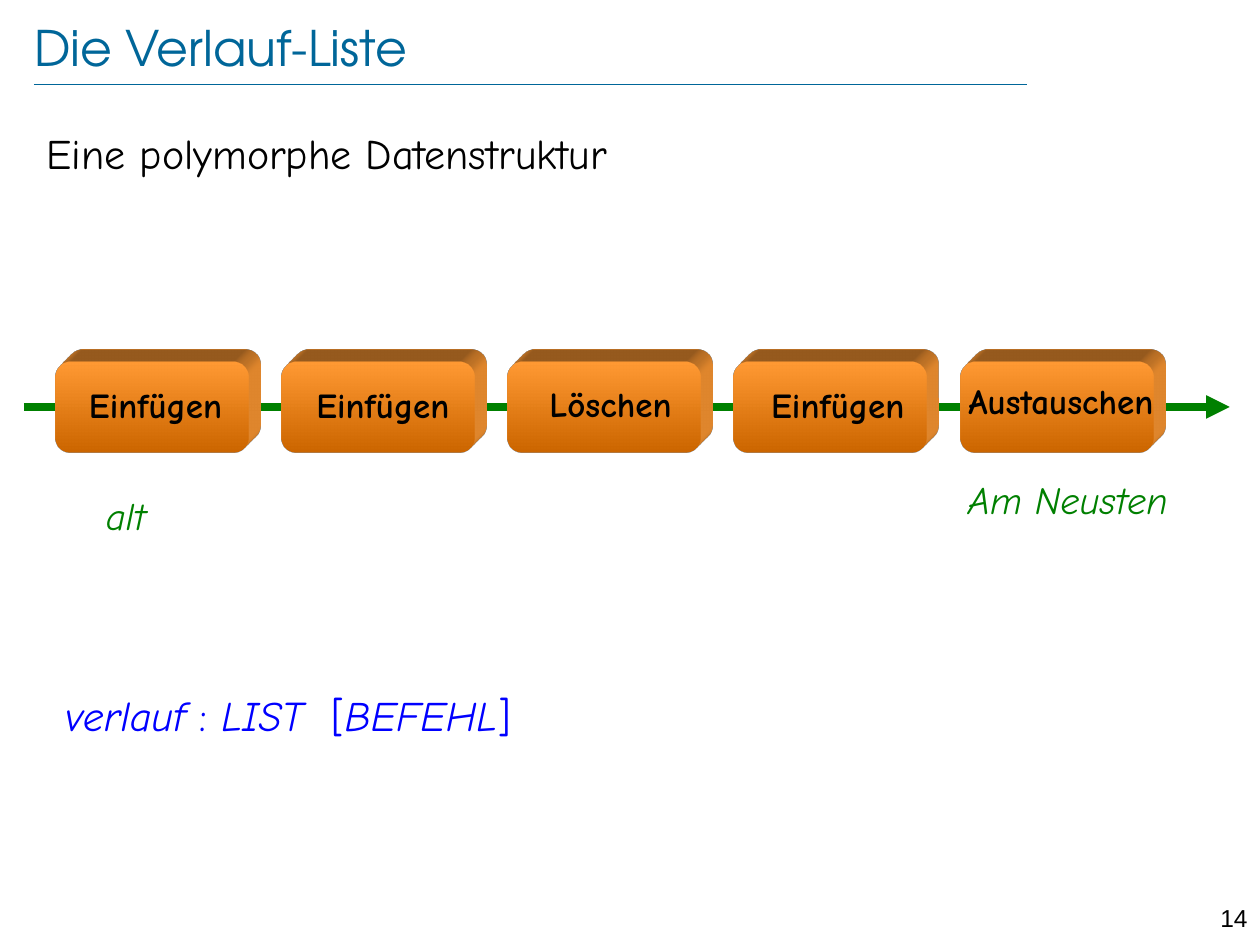
from lxml import etree
from pptx import Presentation
from pptx.dml.color import RGBColor
from pptx.enum.shapes import MSO_CONNECTOR, MSO_SHAPE
from pptx.enum.text import MSO_ANCHOR, PP_ALIGN
from pptx.oxml import parse_xml
from pptx.oxml.ns import nsdecls, qn
from pptx.util import Inches, Pt

LEFT, CENTER, RIGHT = PP_ALIGN.LEFT, PP_ALIGN.CENTER, PP_ALIGN.RIGHT
TOP, MIDDLE = MSO_ANCHOR.TOP, MSO_ANCHOR.MIDDLE
ROUND_RECT = MSO_SHAPE.ROUNDED_RECTANGLE
STRAIGHT = MSO_CONNECTOR.STRAIGHT

HAND = "Comic Neue"
BLACK, TEAL, BLUE, GREEN = "000000", "006699", "0000FF", "008000"
ORANGE, DARK_ORANGE = "FF9933", "CC6600"

BOX_LEFT, BOX_TOP, BOX_W, BOX_H, BOX_STEP = 0.44, 2.87, 1.53, 0.72, 1.795
COMMAND_LABELS = [
    ("Einfügen", (0.44, 2.97, 1.59, 0.48), True),
    ("Einfügen", (2.26, 2.97, 1.56, 0.48), True),
    ("Löschen", (4.15, 2.99, 1.39, 0.44), False),
    ("Einfügen", (5.86, 2.97, 1.58, 0.48), True),
    ("Austauschen", (7.47, 2.96, 1.9, 0.44), False),
]


def rgb(value):
    return RGBColor.from_string(value)


def inches(values):
    return [Inches(v) for v in values]


def write(s, runs, size, color, font=HAND, bold=False, align=LEFT, anchor=TOP):
    """Fill a shape with one paragraph of (text, italic) runs."""
    tf = s.text_frame
    tf.word_wrap = True
    tf.vertical_anchor = anchor
    p = tf.paragraphs[0]
    p.alignment = align
    p.space_before = Pt(0)
    for text, italic in runs:
        r = p.add_run()
        r.text = text
        r.font.name = font
        r.font.size = Pt(size)
        r.font.bold = bold
        r.font.italic = italic
        r.font.color.rgb = rgb(color)
    return p


def place(s, box):
    s.left, s.top, s.width, s.height = inches(box)


def add_title(slide, text):
    title = slide.shapes.title
    place(title, (0.27, 0.13, 8.69, 0.48))
    tf = title.text_frame
    tf.margin_left = tf.margin_top = tf.margin_right = tf.margin_bottom = 0
    write(title, [(text, False)], 28, TEAL, "TeX Gyre Adventor", anchor=MIDDLE)


def add_body(slide, text):
    body = slide.placeholders[1]
    place(body, (0.27, 0.96, 9.4, 6.17))
    p = write(body, [(text, False)], 24, BLACK)
    pPr = p._p.get_or_add_pPr()
    pPr.set("marL", "0")
    pPr.set("indent", "0")
    etree.SubElement(pPr, qn("a:buNone"))


def add_text(slide, box, runs, size, color, **style):
    write(slide.shapes.add_textbox(*inches(box)), runs, size, color, **style)


def add_line(slide, x1, x2, y, color, width, arrow=False):
    line = slide.shapes.add_connector(STRAIGHT, *inches((x1, y, x2, y)))
    line.line.color.rgb = rgb(color)
    line.line.width = Pt(width)
    if arrow:
        ln = line.line._get_or_add_ln()
        etree.SubElement(ln, qn("a:tailEnd"), type="triangle")
    etree.SubElement(line._element.spPr, qn("a:effectLst"))


def extrude(s, color):
    """Give a shape depth towards the top right."""
    spPr = s._element.spPr
    spPr.append(parse_xml(
        f'<a:scene3d {nsdecls("a")}><a:camera prst="legacyObliqueTopRight"/>'
        '<a:lightRig rig="legacyFlat3" dir="b"/></a:scene3d>'))
    spPr.append(parse_xml(
        f'<a:sp3d {nsdecls("a")} extrusionH="252000" prstMaterial="legacyMatte">'
        '<a:bevelT w="13500" h="13500" prst="angle"/>'
        '<a:bevelB w="13500" h="13500" prst="angle"/>'
        f'<a:extrusionClr><a:srgbClr val="{color}"/></a:extrusionClr></a:sp3d>'))


def add_command_box(slide, left):
    s = slide.shapes.add_shape(ROUND_RECT, *inches((left, BOX_TOP, BOX_W, BOX_H)))
    s.shadow.inherit = False
    s.fill.gradient()
    s.fill.gradient_angle = 270
    for stop, color in zip(s.fill.gradient_stops, (ORANGE, DARK_ORANGE)):
        stop.color.rgb = rgb(color)
    s.line.fill.background()
    extrude(s, ORANGE)


def add_command_label(slide, text, box, rounded):
    if rounded:
        s = slide.shapes.add_shape(ROUND_RECT, *inches(box))
        s.shadow.inherit = False
        s.fill.background()
        s.line.fill.background()
    else:
        s = slide.shapes.add_textbox(*inches(box))
    write(s, [(text, False)], 20, BLACK, bold=True, align=CENTER)


def main():
    prs = Presentation()
    prs.slide_width, prs.slide_height = Inches(10), Inches(7.5)
    slide = prs.slides.add_slide(prs.slide_layouts[1])

    add_line(slide, 0.27, 8.15, 0.67, TEAL, 0.25)
    add_text(slide, (9.45, 7.16, 0.55, 0.24), [("14", False)], 14, BLACK,
             font="Arial", align=RIGHT, anchor=MIDDLE)
    add_title(slide, "Die Verlauf-Liste")
    add_body(slide, "Eine polymorphe Datenstruktur")
    add_text(slide, (0.42, 5.42, 9.17, 0.5),
             [("verlauf ", True), (": ", False), ("LIST  ", True),
              ("[", False), ("BEFEHL", True), ("]", False)], 24, BLUE)

    add_line(slide, 0.19, 9.76, 3.23, GREEN, 4.5, arrow=True)
    for i in range(len(COMMAND_LABELS)):
        add_command_box(slide, BOX_LEFT + i * BOX_STEP)
    for text, box, rounded in COMMAND_LABELS:
        add_command_label(slide, text, box, rounded)

    add_text(slide, (0.32, 3.86, 1.36, 0.47), [("alt", True)], 22, GREEN, align=CENTER)
    add_text(slide, (7.4, 3.73, 2.15, 0.47), [("Am Neusten", True)], 22, GREEN,
             align=CENTER)
    prs.save("out.pptx")


if __name__ == "__main__":
    main()
